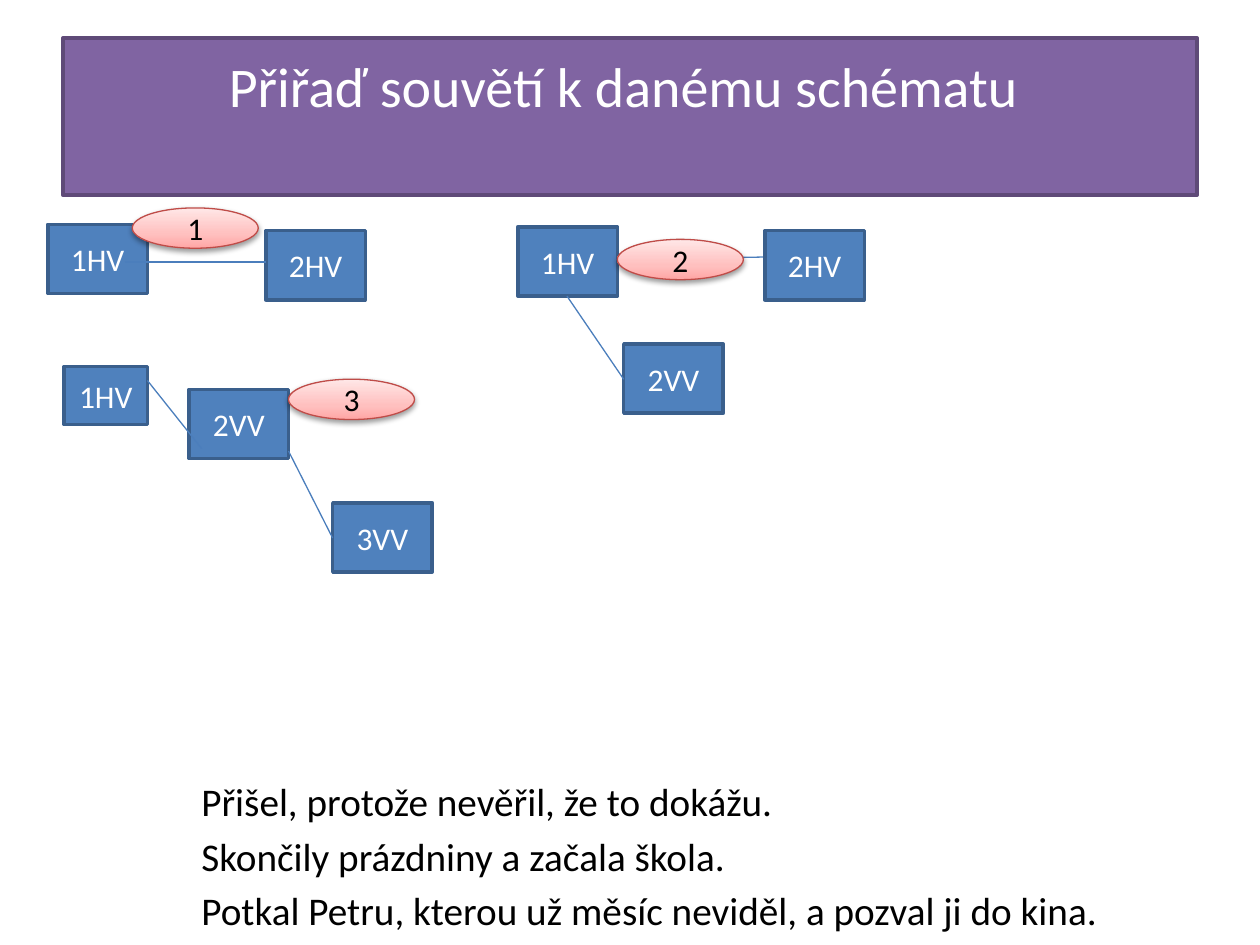
from copy import deepcopy

from lxml import etree
from pptx import Presentation
from pptx.dml.color import RGBColor
from pptx.enum import shapes, text
from pptx.oxml import parse_xml
from pptx.oxml.ns import nsdecls, qn
from pptx.util import Inches, Pt

BLUE, BLUE_EDGE, LINK = "4F81BD", "3A5F8C", "4B7EBC"
PURPLE, PURPLE_EDGE, RED_EDGE = "8064A2", "5F4A78", "BF4C48"
BLACK, WHITE = "000000", "FFFFFF"
PINKS = [(0, "FFA6A5"), (0.35, "FFC0BF"), (1, "FFE7E7")]
CLAUSE_SIZE = (0.79, 0.55)

CLAUSES = [
    ("1HV", 0.38, 1.78, CLAUSE_SIZE),
    ("2HV", 2.11, 1.83, CLAUSE_SIZE),
    ("1HV", 4.11, 1.8, CLAUSE_SIZE),
    ("2HV", 6.07, 1.83, CLAUSE_SIZE),
    ("2VV", 4.95, 2.73, CLAUSE_SIZE),
    ("1HV", 0.51, 2.91, (0.66, 0.46)),
    ("2VV", 1.5, 3.09, CLAUSE_SIZE),
    ("3VV", 2.64, 3.99, CLAUSE_SIZE),
]
LINKS = [
    (0.99, 2.08, 2.11, 2.08),
    (1.17, 3.02, 1.6, 3.56),
    (2.29, 3.58, 2.64, 4.27),
    (4.5, 2.35, 4.95, 3.01),
]
NUMBERS = [("3", 2.29, 3.01), ("2", 4.9, 1.9), ("1", 1.05, 1.65)]
SENTENCES = [
    "Přišel, protože nevěřil, že to dokážu.",
    "Skončily prázdniny a začala škola.",
    "Potkal Petru, kterou už měsíc neviděl, a pozval ji do kina.",
]


def rgb(color):
    return RGBColor.from_string(color)


def set_font(paragraph, size, color):
    font = paragraph.font
    font.name, font.size = "Calibri", Pt(size)
    font.color.rgb = rgb(color)


def add_labelled(slide, kind, box, label, edge, edge_width, size, color, fill=None):
    shape = slide.shapes.add_shape(kind, *map(Inches, box))
    shape.shadow.inherit = False
    if fill:
        shape.fill.solid()
        shape.fill.fore_color.rgb = rgb(fill)
    shape.line.color.rgb = rgb(edge)
    shape.line.width = Pt(edge_width)
    frame = shape.text_frame
    frame.vertical_anchor = text.MSO_ANCHOR.MIDDLE
    frame.text = label
    frame.paragraphs[0].alignment = text.PP_ALIGN.CENTER
    set_font(frame.paragraphs[0], size, color)
    return shape


def add_title(slide, label):
    title = add_labelled(slide, shapes.MSO_SHAPE.RECTANGLE, (0.5, 0.3, 9, 1.25),
                         label, PURPLE_EDGE, 2, 32, WHITE, PURPLE)
    frame = title.text_frame
    frame.vertical_anchor = text.MSO_ANCHOR.TOP
    frame.margin_top, frame.margin_right = Inches(0.11), Inches(0.2)


def add_clause(slide, label, left, top, size):
    add_labelled(slide, shapes.MSO_SHAPE.RECTANGLE, (left, top, *size),
                 label, BLUE_EDGE, 2, 18, WHITE, BLUE)


def add_link(slide, *ends):
    link = slide.shapes.add_connector(shapes.MSO_CONNECTOR.STRAIGHT, *map(Inches, ends))
    link.line.color.rgb = rgb(LINK)
    link.line.width = Pt(0.75)
    etree.SubElement(link._element.spPr, qn("a:effectLst"))


def fill_pink(shape):
    """Three-stop gradient, darkest at the bottom."""
    shape.fill.gradient()
    shape.fill.gradient_angle = 90
    stop_list = shape._element.spPr.find(".//" + qn("a:gsLst"))
    stop_list.insert(1, deepcopy(stop_list[0]))
    for stop, (position, color) in zip(shape.fill.gradient_stops, PINKS):
        stop.position = position
        stop.color.rgb = rgb(color)


def add_soft_shadow(shape):
    effects = shape._element.spPr.find(qn("a:effectLst"))
    effects.append(parse_xml(
        f'<a:outerShdw {nsdecls("a")} blurRad="{Pt(3.1)}" dist="{Pt(1.6)}" '
        'dir="5400000" rotWithShape="0"><a:srgbClr val="000000">'
        '<a:alpha val="38000"/></a:srgbClr></a:outerShdw>'))


def add_number(slide, label, left, top):
    number = add_labelled(slide, shapes.MSO_SHAPE.OVAL, (left, top, 1, 0.32),
                          label, RED_EDGE, 0.75, 18, BLACK)
    fill_pink(number)
    add_soft_shadow(number)


def add_sentences(slide, sentences):
    frame = slide.shapes.add_textbox(*map(Inches, (1.5, 6.12, 8, 1.35))).text_frame
    frame.word_wrap = True
    frame.text = "\n".join(sentences)
    for paragraph in frame.paragraphs:
        paragraph.space_after = Pt(4.4)
        set_font(paragraph, 22.4, BLACK)


def main():
    deck = Presentation()
    deck.slide_width, deck.slide_height = Inches(10), Inches(7.5)
    slide = deck.slides.add_slide(deck.slide_layouts[6])
    add_link(slide, 4.9, 2.06, 6.07, 2.04)
    add_title(slide, "Přiřaď souvětí k danému schématu")
    add_sentences(slide, SENTENCES)
    for clause in CLAUSES:
        add_clause(slide, *clause)
    for link in LINKS:
        add_link(slide, *link)
    for number in NUMBERS:
        add_number(slide, *number)
    deck.save("out.pptx")


if __name__ == "__main__":
    main()
